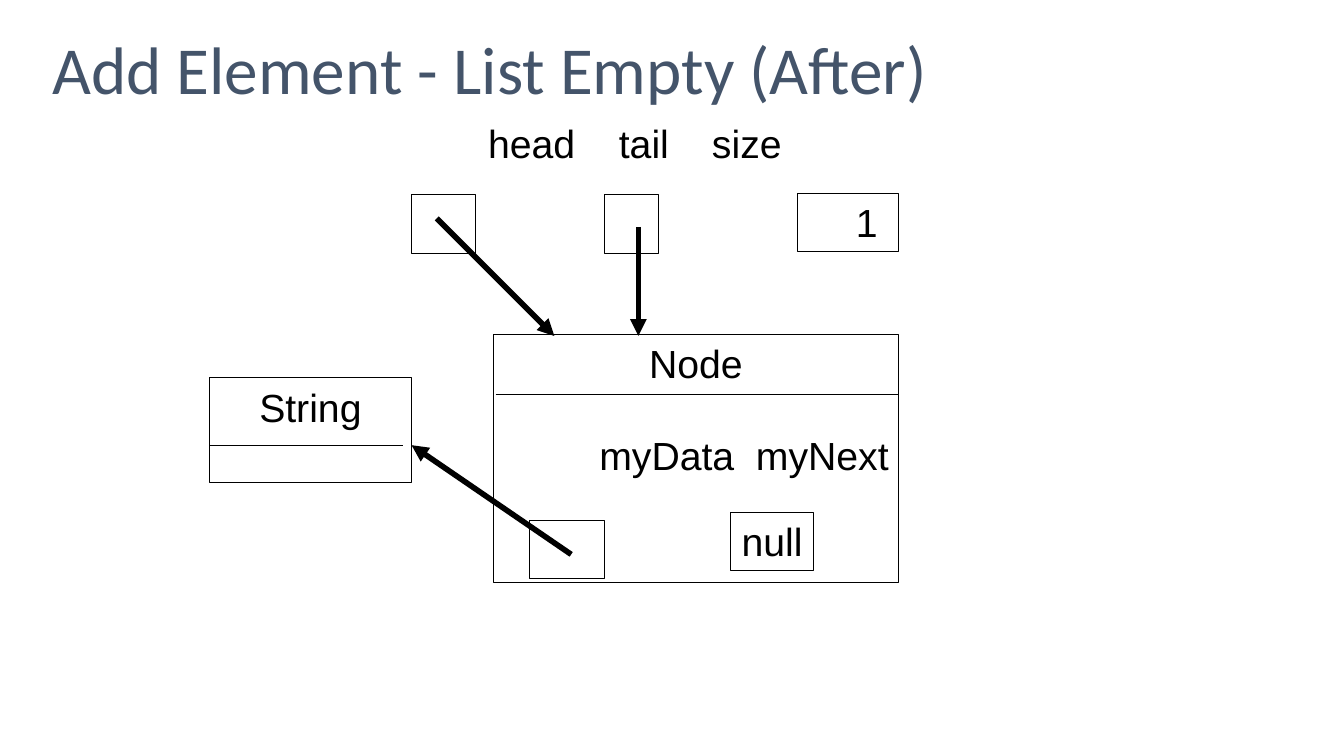
from dataclasses import dataclass
from pptx import Presentation
from pptx.util import Pt
from pptx.dml.color import RGBColor
from pptx.enum import shapes, text
from pptx.oxml import parse_xml
from pptx.oxml.ns import nsdecls


@dataclass(frozen=True)
class Theme:
    ink: str = "000000"
    title: str = "44546A"
    font: str = "Arial"
    head: str = "Calibri"
    body: float = 28
    big: float = 48
    thin: float = 0.75
    thick: float = 4


T = Theme()
LEFT, MID, RIGHT = text.PP_ALIGN.LEFT, text.PP_ALIGN.CENTER, text.PP_ALIGN.RIGHT

# Content, lengths in points
SIZE = (960, 540)
TITLE = ("Add Element - List Empty (After)", (30.24, 0, 900, 104.4))
LABELS = (("head", "tail", "size"), (341.5, 82, 226, 39.4))
STOPS = (93.5, 160)
FIELDS = ("myData  myNext", 32.2)
# Boxes: text, place, alignment, side margin
LIST = [
    ("", (294, 139, 46, 42), MID, 0),
    ("", (432, 139, 38.5, 42), MID, 0),
    ("1", (570, 138.2, 72, 41.5), RIGHT, 15),
    ("String", (149.5, 270, 144.5, 75), MID, 7.2),
]
NODE = [
    ("null", (522, 366, 59, 41.5), MID, 0),
    ("", (378, 372, 54, 41.5), MID, 0),
]
CARD = ("Node", (352.3, 239, 289.5, 177), MID, 7.2)
# Lines: start, end
RULE = ((149.5, 318), (288, 318))
SPLIT = ((354, 282), (642, 282))
DATA = ((408, 396), (294, 318))
ENDS = [((312, 156), (396, 240)), ((456, 162), (456, 240))]


def put(para, words, align, font=T.font, size=T.body, ink=T.ink):
    para.alignment = align
    run = para.add_run()
    run.text = words
    run.font.name = font
    run.font.size = Pt(size)
    run.font.color.rgb = RGBColor.from_string(ink)


def frame(shape, side=7.2, anchor=text.MSO_ANCHOR.TOP):
    body = shape.text_frame
    body.word_wrap = True
    body.vertical_anchor = anchor
    body.margin_left = body.margin_right = Pt(side)
    return body


def box(home, words, place, align, side):
    rect = home.add_shape(shapes.MSO_SHAPE.RECTANGLE, *map(Pt, place))
    rect.shadow.inherit = False
    rect.fill.background()
    rect.line.color.rgb = RGBColor.from_string(T.ink)
    rect.line.width = Pt(T.thin)
    if words:
        put(frame(rect, side).paragraphs[0], words, align)
    return rect


def line(home, start, end, arrow=False):
    link = home.add_connector(shapes.MSO_CONNECTOR.STRAIGHT, *map(Pt, start + end))
    link.line.color.rgb = RGBColor.from_string(T.ink)
    link.line.width = Pt(T.thick if arrow else T.thin)
    props = link._element.spPr
    if arrow:
        props.find("{*}ln").append(parse_xml(f'<a:tailEnd type="triangle" {nsdecls("a")}/>'))
    props.append(parse_xml(f'<a:effectLst {nsdecls("a")}/>'))


def main():
    deck = Presentation()
    deck.slide_width, deck.slide_height = map(Pt, SIZE)
    page = deck.slides.add_slide(deck.slide_layouts[6]).shapes

    # Title
    words, place = TITLE
    area = page.add_textbox(*map(Pt, place))
    para = frame(area, anchor=text.MSO_ANCHOR.MIDDLE).paragraphs[0]
    put(para, words, LEFT, T.head, T.big, T.title)
    para.line_spacing = 0.9

    # Variable names, set on tab stops
    names, place = LABELS
    para = frame(page.add_textbox(*map(Pt, place))).paragraphs[0]
    put(para, "\t".join(names), LEFT)
    tabs = "".join(f'<a:tab pos="{Pt(stop)}" algn="l"/>' for stop in STOPS)
    para._p.get_or_add_pPr().append(
        parse_xml(f'<a:tabLst {nsdecls("a")}>{tabs}</a:tabLst>'))

    # List variables and the string
    for item in LIST:
        box(page, *item)
    line(page, *RULE)

    # Node with its fields
    node = page.add_group_shape().shapes
    para = box(node, *CARD).text_frame.add_paragraph()
    words, gap = FIELDS
    put(para, words, RIGHT)
    para.space_before = Pt(gap)
    line(node, *SPLIT)
    for item in NODE:
        box(node, *item)
    line(node, *DATA, arrow=True)

    # Head and tail pointers
    for start, end in ENDS:
        line(page, start, end, arrow=True)

    deck.save("out.pptx")


if __name__ == "__main__":
    main()
